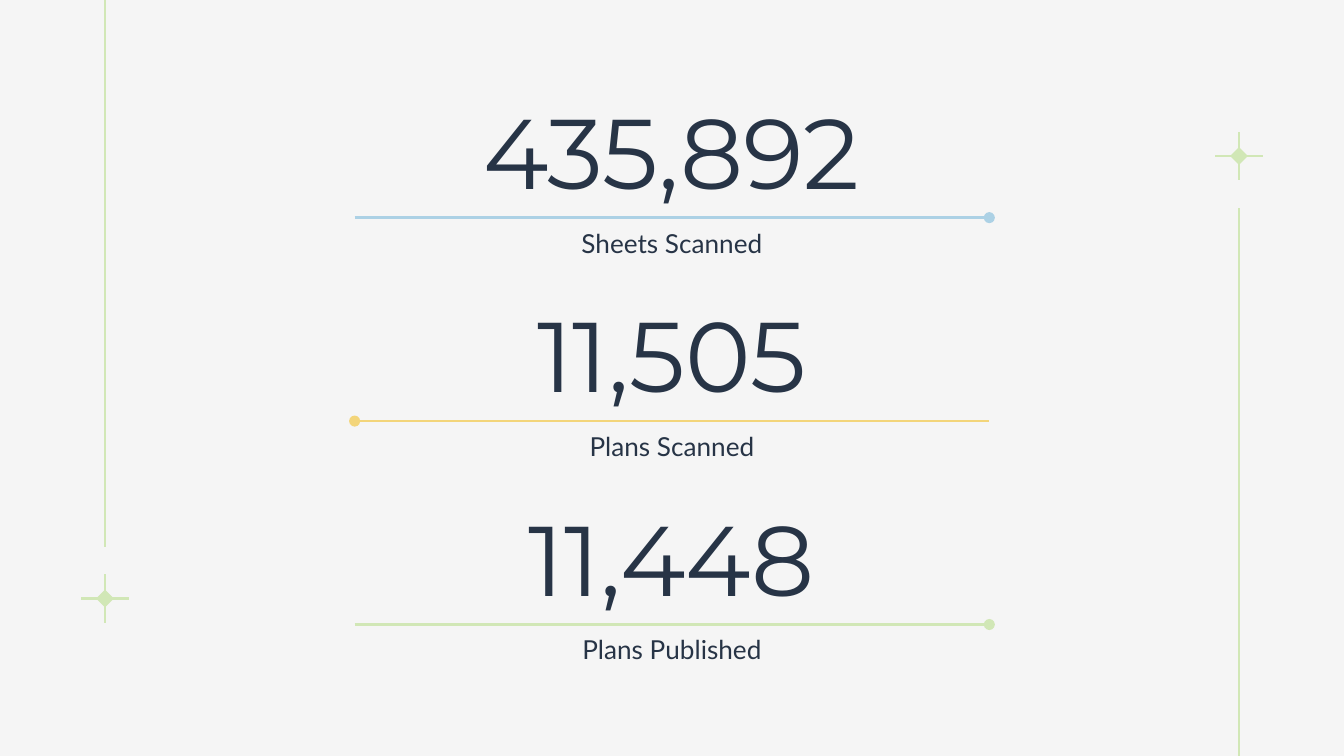
from lxml.etree import SubElement
from pptx import Presentation
from pptx.dml.color import RGBColor
from pptx.enum.shapes import MSO_CONNECTOR as Link, MSO_SHAPE as Preset
from pptx.enum.text import MSO_ANCHOR as Anchor, MSO_AUTO_SIZE as AutoSize, PP_ALIGN as Align
from pptx.oxml.ns import qn
from pptx.util import Pt

COLORS = {"paper": "F5F5F5", "ink": "273446", "blue": "ACD1E5", "yellow": "F3D57A", "green": "D1E7B6"}
STATS = [
    ("435,892", "Sheets Scanned", "blue", "tailEnd"),
    ("11,505", "Plans Scanned", "yellow", "headEnd"),
    ("11,448", "Plans Published", "green", "tailEnd"),
]
SPARKLES = [
    {"center": (663.75, 83.6), "rule": (111.6, 405)},
    {"center": (56.25, 320.6), "rule": (0, 293)},
]
WIDTH, HEIGHT = 720, 405
BOX_LEFT, BOX_WIDTH = 182, 356
RULE_LEFT, RULE_RIGHT = 190, 530
FIRST_TOP, PITCH = 54.6, 109
NUMBER_HEIGHT, LABEL_HEIGHT = 65.6, 31
LABEL_OFFSET, RULE_OFFSET = 59.8, 62
DIAMOND, RAY_INNER, RAY_OUTER = 7.4, 1.6, 13


def color(name):
    return RGBColor.from_string(COLORS[name])


def draw_line(page, start, end, name, dot=None):
    line = page.shapes.add_connector(Link.STRAIGHT, *map(Pt, (*start, *end)))
    line.line.color.rgb = color(name)
    line.line.width = Pt(1.5)
    properties = line.element.spPr
    if dot:
        SubElement(properties.find(qn("a:ln")), qn(f"a:{dot}"), type="oval")
    SubElement(properties, qn("a:effectLst"))


def draw_sparkle(page, center, rule):
    x, y = center
    half = DIAMOND / 2
    diamond = page.shapes.add_shape(Preset.DIAMOND, *map(Pt, (x - half, y - half, DIAMOND, DIAMOND)))
    diamond.shadow.inherit = False
    diamond.fill.solid()
    diamond.fill.fore_color.rgb = color("green")
    diamond.line.color.rgb = color("green")
    diamond.line.width = Pt(1.5)
    for dx, dy in ((0, -1), (0, 1), (1, 0), (-1, 0)):
        inner, outer = ((x + dx * reach, y + dy * reach) for reach in (RAY_INNER, RAY_OUTER))
        draw_line(page, inner, outer, "green")
    draw_line(page, (x, rule[0]), (x, rule[1]), "green")


def write_text(page, text, *, top, height, size, font, anchor, spacing=1.0, box=None):
    if box is None:
        box = page.shapes.add_textbox(0, 0, 0, 0)
    box.left, box.top, box.width, box.height = map(Pt, (BOX_LEFT, top, BOX_WIDTH, height))
    frame = box.text_frame
    frame.word_wrap = True
    frame.auto_size = AutoSize.NONE
    frame.vertical_anchor = anchor
    frame.margin_left = frame.margin_right = frame.margin_top = frame.margin_bottom = Pt(7.2)
    para = frame.paragraphs[0]
    para.alignment = Align.CENTER
    para.line_spacing = spacing
    span = para.add_run()
    span.text = text
    span.font.size = Pt(size)
    span.font.name = font
    span.font.color.rgb = color("ink")


def main():
    deck = Presentation()
    deck.slide_width, deck.slide_height = Pt(WIDTH), Pt(HEIGHT)
    page = deck.slides.add_slide(deck.slide_layouts[5])
    page.background.fill.solid()
    page.background.fill.fore_color.rgb = color("paper")

    for sparkle in SPARKLES:
        draw_sparkle(page, **sparkle)

    for index, (number, label, name, dot) in enumerate(STATS):
        top = FIRST_TOP + index * PITCH
        write_text(page, number, top=top, height=NUMBER_HEIGHT, size=53, font="Montserrat",
                   anchor=Anchor.BOTTOM, spacing=0.9, box=page.shapes.title if index == 0 else None)
        write_text(page, label, top=top + LABEL_OFFSET, height=LABEL_HEIGHT, size=14,
                   font="Lato", anchor=Anchor.TOP)
        rule_y = top + RULE_OFFSET
        draw_line(page, (RULE_LEFT, rule_y), (RULE_RIGHT, rule_y), name, dot)

    deck.save("out.pptx")


if __name__ == "__main__":
    main()
